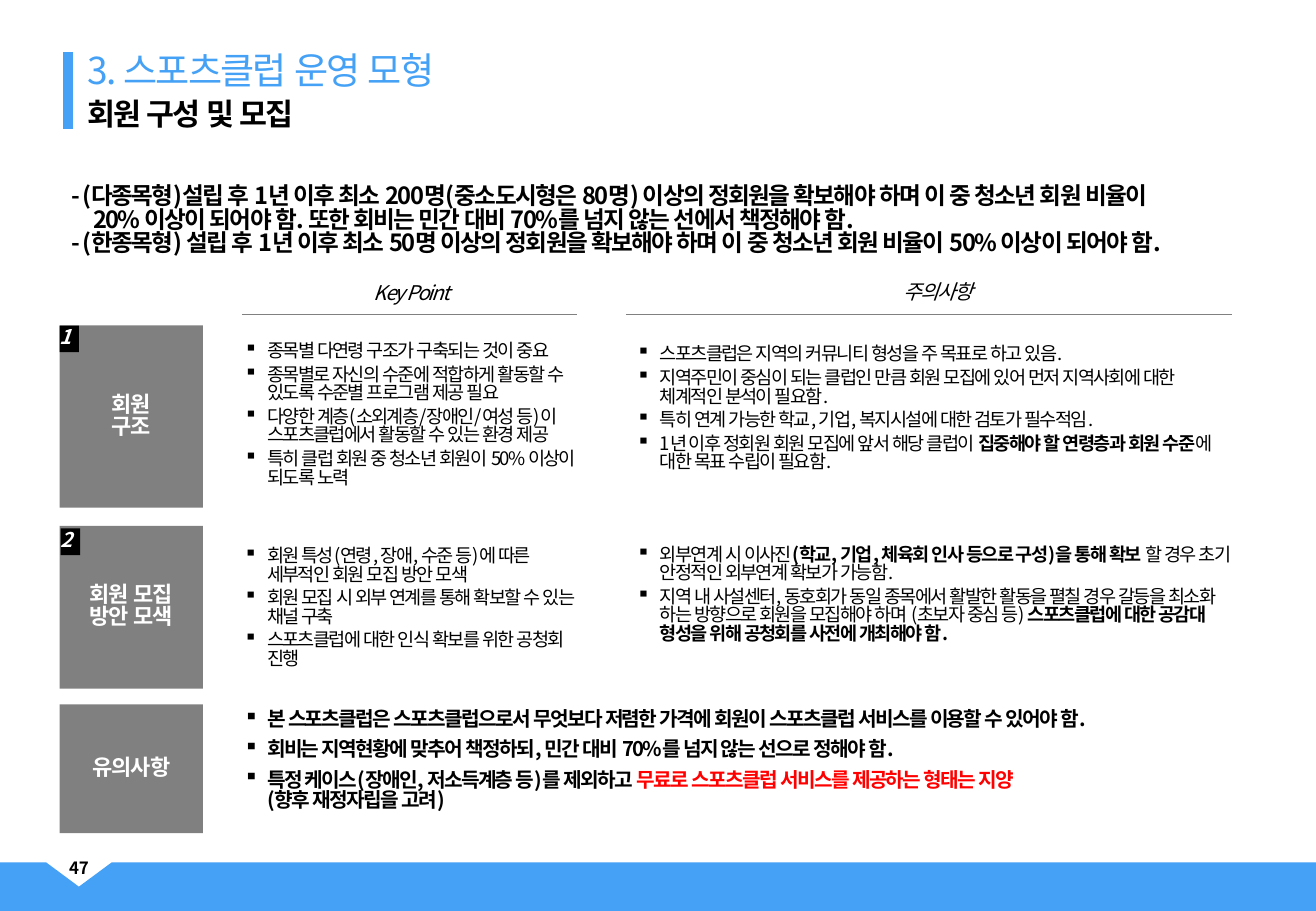
from copy import deepcopy
from dataclasses import dataclass

from lxml import etree
from pptx import Presentation
from pptx.dml.color import RGBColor
from pptx.enum.shapes import MSO_CONNECTOR, MSO_SHAPE
from pptx.enum.text import MSO_ANCHOR, PP_ALIGN
from pptx.oxml.ns import qn
from pptx.shapes.base import BaseShape
from pptx.slide import Slide
from pptx.util import Inches, Pt

LEFT, CENTER = PP_ALIGN.LEFT, PP_ALIGN.CENTER
TOP, MIDDLE, BOTTOM = MSO_ANCHOR.TOP, MSO_ANCHOR.MIDDLE, MSO_ANCHOR.BOTTOM
RECTANGLE, STRAIGHT = MSO_SHAPE.RECTANGLE, MSO_CONNECTOR.STRAIGHT


@dataclass(frozen=True)
class Theme:
    font: str = "Noto Sans CJK KR"
    accent: str = "45A1F5"
    tile: str = "808080"
    black: str = "000000"
    white: str = "FFFFFF"
    warning: str = "FF0000"
    title: float = 22
    subtitle: float = 18
    lead: float = 14
    label: float = 13
    heading: float = 12
    body: float = 11
    page: float = 10


THEME = Theme()


@dataclass(frozen=True)
class Box:
    left: float
    top: float
    width: float
    height: float

    def lengths(self) -> list[int]:
        return [Inches(value) for value in (self.left, self.top, self.width, self.height)]


@dataclass(frozen=True)
class Run:
    text: str
    bold: bool = False
    color: str = THEME.black


@dataclass(frozen=True)
class Style:
    size: float
    bold: bool = False
    italic: bool = False
    color: str = THEME.black
    tracking: float = -1
    align: PP_ALIGN = LEFT
    anchor: MSO_ANCHOR = TOP
    margins: tuple = (0.1, 0.05, 0.1, 0.05)
    line_spacing: float = 0.83
    space_after: float = 0
    hanging: float = 0
    bullet: str = ""
    wrap: bool = True


@dataclass(frozen=True)
class Section:
    number: str
    label: str
    tile: Box
    badge: Box
    key_box: Box
    key_points: list
    note_box: Box
    notes: list


TITLE = Style(THEME.title, color=THEME.accent, anchor=MIDDLE, margins=(0.1, 0, 0.1, 0), line_spacing=0.8)
SUBTITLE = Style(THEME.subtitle, True, anchor=MIDDLE, margins=(0.1, 0, 0.1, 0), line_spacing=0.8)
LEAD = Style(THEME.lead, True, hanging=0.18)
HEADING = Style(THEME.heading, italic=True, align=CENTER)
LABEL = Style(THEME.label, True, color=THEME.white, tracking=-0.5, align=CENTER, anchor=MIDDLE)
BADGE = Style(THEME.heading, True, True, THEME.white, 0, CENTER, MIDDLE, (0.04, 0.05, 0.1, 0.05), wrap=False)
BODY = Style(THEME.body, anchor=MIDDLE, space_after=3, hanging=0.19, bullet="▪")
CAUTION = Style(THEME.heading, True, space_after=6, hanging=0.19, bullet="▪")
PAGE = Style(THEME.page, True, tracking=0, align=CENTER, anchor=BOTTOM)

LEAD_TEXT = [
    "- (다종목형)설립 후 1년 이후 최소 200명(중소도시형은 80명) 이상의 정회원을 확보해야 하며 이 중 청소년 회원 비율이\n20% 이상이 되어야 함. 또한 회비는 민간 대비 70%를 넘지 않는 선에서 책정해야 함.",
    "- (한종목형) 설립 후 1년 이후 최소 50명 이상의 정회원을 확보해야 하며 이 중 청소년 회원 비율이 50% 이상이 되어야 함.",
]
SECTIONS = [
    Section(
        "1", "회원\n구조", Box(0.49, 2.68, 1.18, 1.5), Box(0.49, 2.68, 0.16, 0.22),
        Box(1.91, 2.66, 3.15, 1.52),
        ["종목별 다연령 구조가 구축되는 것이 중요",
         "종목별로 자신의 수준에 적합하게 활동할 수 있도록 수준별 프로그램 제공 필요",
         "다양한 계층(소외계층/장애인/여성 등)이\n스포츠클럽에서 활동할 수 있는 환경 제공",
         "특히 클럽 회원 중 청소년 회원이 50% 이상이 되도록 노력"],
        Box(5.14, 2.7, 5.12, 1.34),
        ["스포츠클럽은 지역의 커뮤니티 형성을 주 목표로 하고 있음.",
         "지역주민이 중심이 되는 클럽인 만큼 회원 모집에 있어 먼저 지역사회에 대한 체계적인 분석이 필요함.",
         "특히 연계 가능한 학교, 기업, 복지시설에 대한 검토가 필수적임.",
         [Run("1년 이후 정회원 회원 모집에 앞서 해당 클럽이 "),
          Run("집중해야 할 연령층과 회원 수준", True), Run("에 대한 목표 수립이 필요함.")]]),
    Section(
        "2", "회원 모집\n방안 모색", Box(0.49, 4.33, 1.18, 1.34), Box(0.5, 4.35, 0.16, 0.22),
        Box(1.91, 4.36, 3.04, 1.3),
        ["회원 특성(연령, 장애, 수준 등)에 따른 세부적인 회원 모집 방안 모색",
         "회원 모집 시 외부 연계를 통해 확보할 수 있는 채널 구축",
         "스포츠클럽에 대한 인식 확보를 위한 공청회 진행"],
        Box(5.14, 4.36, 5.12, 1.08),
        [[Run("외부연계 시 이사진"), Run("(학교, 기업, 체육회 인사 등으로 구성)을 통해 확보", True),
          Run(" 할 경우 초기 안정적인 외부연계 확보가 가능함.")],
         [Run("지역 내 사설센터, 동호회가 동일 종목에서 활발한 활동을 펼칠 경우 갈등을 최소화 하는 방향으로 회원을 모집해야 하며 (초보자 중심 등) "),
          Run("스포츠클럽에 대한 공감대 형성을 위해 공청회를 사전에 개최해야 함.", True)]]),
]
CAUTIONS = [
    "본 스포츠클럽은 스포츠클럽으로서 무엇보다 저렴한 가격에 회원이 스포츠클럽 서비스를 이용할 수 있어야 함.",
    "회비는 지역현황에 맞추어 책정하되, 민간 대비 70%를 넘지 않는 선으로 정해야 함.",
    [Run("특정 케이스(장애인, 저소득계층 등)를 제외하고 ", True),
     Run("무료로 스포츠클럽 서비스를 제공하는 형태는 지양\n", True, THEME.warning), Run("(향후 재정자립을 고려)", True)],
]


def set_values(target: object, values: dict) -> None:
    for name, value in values.items():
        setattr(target, name, value)


def add_run(paragraph, text: str, run: Run, style: Style) -> etree._Element:
    text_run = paragraph.add_run()
    text_run.text = text
    set_values(text_run.font, {"name": THEME.font, "size": Pt(style.size), "bold": run.bold, "italic": style.italic})
    text_run.font.color.rgb = RGBColor.from_string(run.color)
    properties = text_run._r.get_or_add_rPr()
    properties.set("lang", "ko-KR")
    properties.set("spc", str(int(style.tracking * 100)))
    etree.SubElement(properties, qn("a:ea")).set("typeface", THEME.font)
    return properties


def write(shape: BaseShape, paragraphs: list, style: Style) -> None:
    frame = shape.text_frame
    left, top, right, bottom = map(Inches, style.margins)
    set_values(frame, {"word_wrap": style.wrap, "vertical_anchor": style.anchor, "margin_left": left,
                       "margin_top": top, "margin_right": right, "margin_bottom": bottom})
    for index, content in enumerate(paragraphs):
        paragraph = frame.add_paragraph() if index else frame.paragraphs[0]
        set_values(paragraph, {"alignment": style.align, "line_spacing": style.line_spacing,
                               "space_before": Pt(0), "space_after": Pt(style.space_after)})
        properties = paragraph._p.get_or_add_pPr()
        properties.set("marL", str(Inches(style.hanging)))
        properties.set("indent", str(-Inches(style.hanging)))
        if style.bullet:
            etree.SubElement(properties, qn("a:buChar")).set("char", style.bullet)
        runs = [Run(content, style.bold, style.color)] if isinstance(content, str) else content
        for run in runs:
            for position, line in enumerate(run.text.split("\n")):
                if position:
                    paragraph.add_line_break()
                    paragraph._p[-1].append(deepcopy(run_properties))
                if line:
                    run_properties = add_run(paragraph, line, run, style)


def add_text(slide: Slide, box: Box, paragraphs: list, style: Style) -> None:
    write(slide.shapes.add_textbox(*box.lengths()), paragraphs, style)


def paint(shape: BaseShape, color: str) -> None:
    shape.shadow.inherit = False
    shape.fill.solid()
    shape.fill.fore_color.rgb = RGBColor.from_string(color)
    shape.line.fill.background()


def add_tile(slide: Slide, box: Box, text: str, color: str, style: Style) -> None:
    shape = slide.shapes.add_shape(RECTANGLE, *box.lengths())
    paint(shape, color)
    write(shape, [text], style)


def add_line(slide: Slide, start: tuple, end: tuple, color: str, width: float) -> None:
    connector = slide.shapes.add_connector(STRAIGHT, *map(Inches, start + end))
    connector.line.color.rgb = RGBColor.from_string(color)
    connector.line.width = Pt(width)
    etree.SubElement(connector._element.spPr, qn("a:effectLst"))


def add_footer(slide: Slide) -> None:
    outline = [(0, 7.1), (0.38, 7.1), (0.65, 7.3), (0.92, 7.1), (10.83, 7.1), (10.83, 7.5), (0, 7.5)]
    points = [(Inches(x), Inches(y)) for x, y in outline]
    builder = slide.shapes.build_freeform(*points[0])
    builder.add_line_segments(points[1:], close=True)
    paint(builder.convert_to_shape(), THEME.accent)
    add_text(slide, Box(0.33, 6.91, 0.64, 0.37), ["47"], PAGE)


def main() -> None:
    """Build the slide on sports club membership and recruitment."""
    presentation = Presentation()
    set_values(presentation, {"slide_width": Inches(10.83), "slide_height": Inches(7.5)})
    slide = presentation.slides.add_slide(presentation.slide_layouts[5])
    add_footer(slide)
    title = slide.shapes.title
    set_values(title, dict(zip(("left", "top", "width", "height"), Box(0.62, 0.46, 4.79, 0.3).lengths())))
    write(title, ["3. 스포츠클럽 운영 모형"], TITLE)
    add_text(slide, Box(0.62, 0.84, 4.62, 0.24), ["회원 구성 및 모집"], SUBTITLE)
    add_line(slide, (0.56, 0.43), (0.56, 1.06), THEME.accent, 6)
    add_text(slide, Box(0.49, 1.48, 9.96, 0.58), LEAD_TEXT, LEAD)
    for text, left, top, start, end in (("Key Point", 2.88, 2.29, 1.99, 4.75), ("주의사항", 7.21, 2.28, 5.15, 10.14)):
        add_text(slide, Box(left, top, 1.02, 0.31), [text], HEADING)
        add_line(slide, (start, 2.59), (end, 2.59), THEME.tile, 0.25)
    for section in SECTIONS:
        add_tile(slide, section.tile, section.label, THEME.tile, LABEL)
        add_tile(slide, section.badge, section.number, THEME.black, BADGE)
        add_text(slide, section.key_box, section.key_points, BODY)
        add_text(slide, section.note_box, section.notes, BODY)
    add_tile(slide, Box(0.49, 5.8, 1.18, 1.06), "유의사항", THEME.tile, LABEL)
    add_text(slide, Box(1.91, 5.8, 8.9, 1.08), CAUTIONS, CAUTION)
    presentation.save("out.pptx")


if __name__ == "__main__":
    main()
